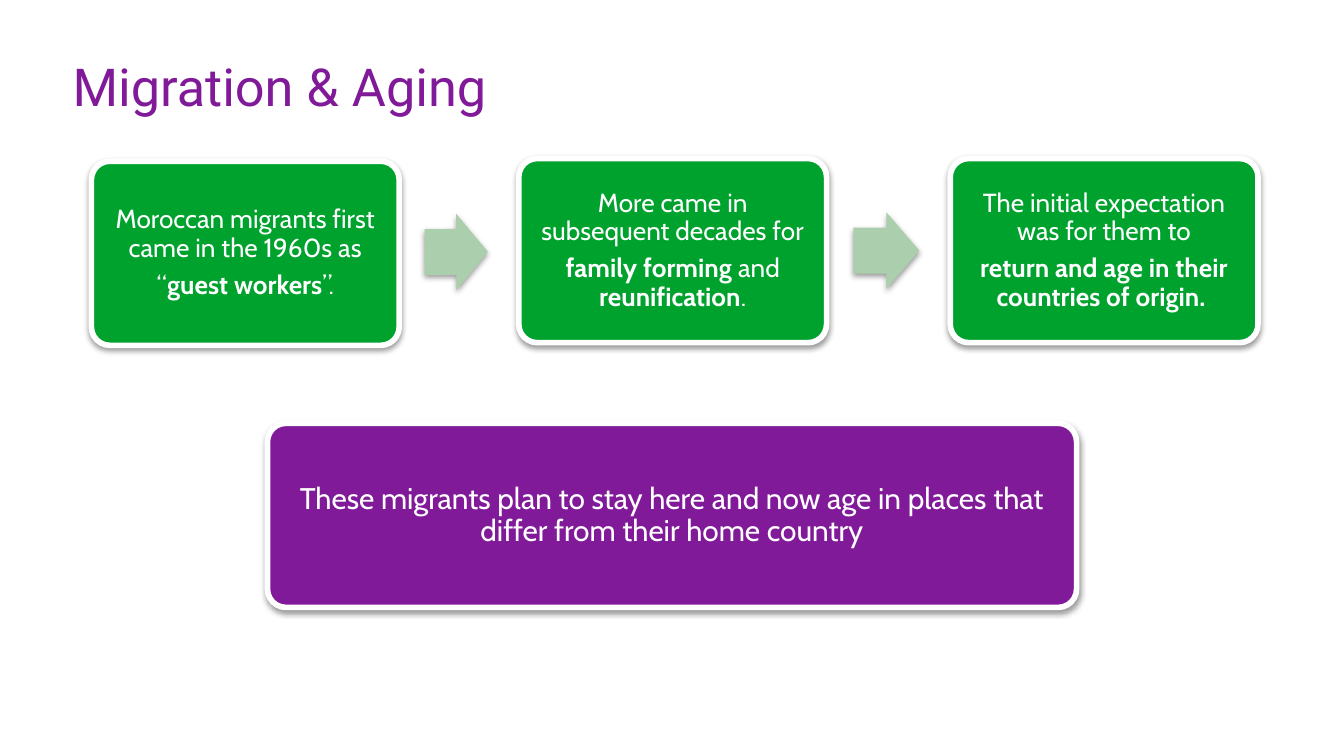
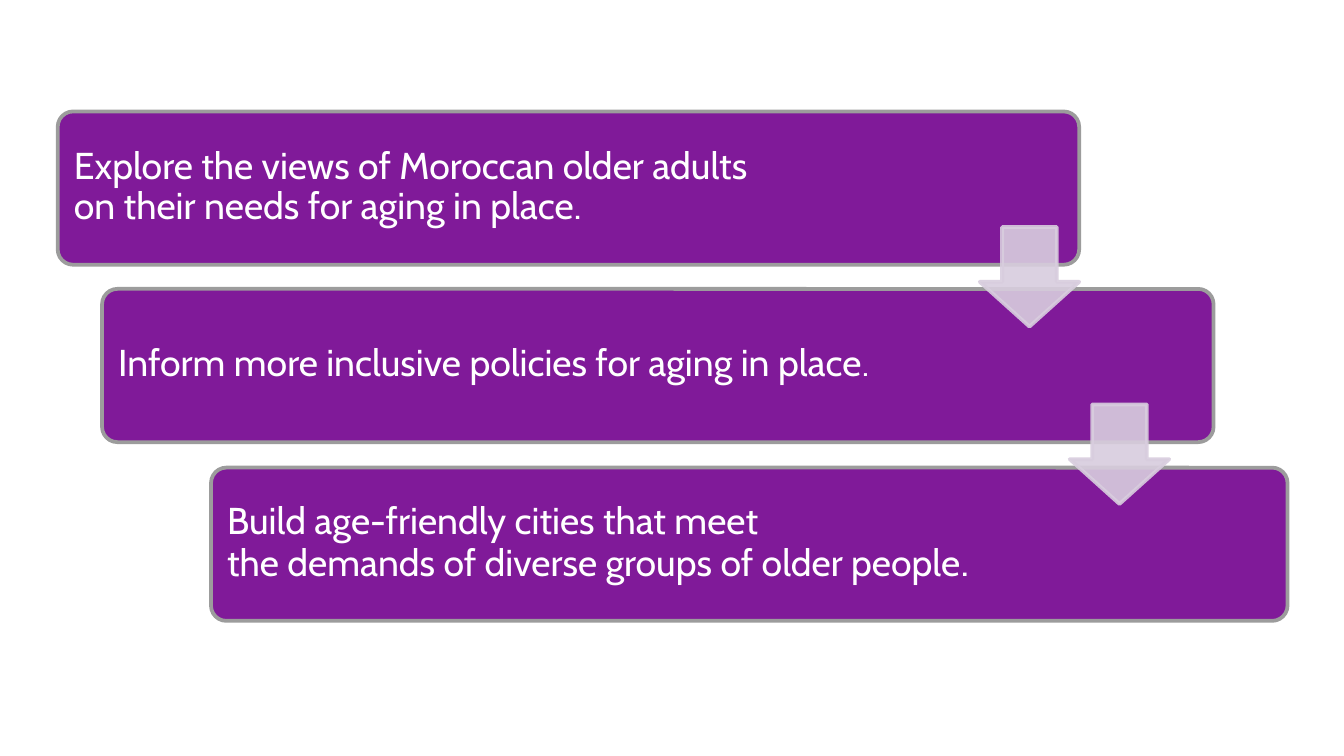
from lxml.etree import SubElement
from pptx import Presentation
from pptx.dml.color import RGBColor
from pptx.enum.shapes import MSO_SHAPE
from pptx.enum.text import MSO_ANCHOR, PP_ALIGN
from pptx.oxml.ns import qn
from pptx.util import Pt

SCALE = 9144
HUES = {"purple": "801A99", "green": "00A22E", "mint": "ABCEAD",
        "lilac": "D8CDDE", "gray": "9C9C9C", "white": "FFFFFF"}


class Deck:
    """Holds the shared style and the slide being filled."""

    def __init__(self):
        self.prs = Presentation()
        self.prs.slide_width, self.prs.slide_height = self.px(1000, 562.5)
        self.slide = None

    def px(self, *sizes):
        return [round(size * SCALE) for size in sizes]

    def hue(self, name):
        return RGBColor.from_string(HUES[name])

    def page(self):
        self.slide = self.prs.slides.add_slide(self.prs.slide_layouts[6])

    def fade(self, part, amount):
        for color in part.iter(qn("a:srgbClr")):
            SubElement(color, qn("a:alpha"), val=str(amount * 1000))

    def shade(self, shape):
        effects = shape.element.spPr.find(qn("a:effectLst"))
        outer = SubElement(effects, qn("a:outerShdw"), blurRad=str(Pt(3.1)),
                           dist=str(Pt(1.6)), dir="5400000", rotWithShape="0")
        SubElement(outer, qn("a:srgbClr"), val="000000")
        self.fade(outer, 38)

    def shape(self, kind, box, fill, line=None, width=0, adjs=()):
        shape = self.slide.shapes.add_shape(kind, *self.px(*box))
        shape.shadow.inherit = False
        for i, value in enumerate(adjs):
            shape.adjustments[i] = value
        shape.fill.solid()
        shape.fill.fore_color.rgb = self.hue(fill)
        if line:
            shape.line.color.rgb = self.hue(line)
            shape.line.width = Pt(width)
        else:
            shape.line.fill.background()
        return shape

    def text(self, box, paras, size, color="white", font="Cabin", align=PP_ALIGN.LEFT,
             inset=0, space=0.9, after=0, anchor=MSO_ANCHOR.MIDDLE):
        frame = self.slide.shapes.add_textbox(*self.px(*box)).text_frame
        frame.word_wrap = True
        frame.vertical_anchor = anchor
        edge, = self.px(inset)
        frame.margin_left = frame.margin_right = edge
        frame.margin_top = frame.margin_bottom = edge
        for i, runs in enumerate(paras):
            para = frame.add_paragraph() if i else frame.paragraphs[0]
            para.alignment = align
            para.line_spacing = space
            para.space_after = Pt(after)
            for words, bold, *own in runs:
                for j, part in enumerate(words.split("\n")):
                    if j:
                        para.add_line_break()
                    run = para.add_run()
                    run.text = part
                    run.font.name = font
                    run.font.size = Pt(own[0] if own else size)
                    run.font.bold = bold
                    run.font.color.rgb = self.hue(color)

    def title(self, words):
        self.text((54, 43, 894, 63), [[(words, False)]], 28, "purple", "Roboto",
                  space=Pt(32), anchor=MSO_ANCHOR.TOP)

    def card(self, box, fill, paras, size, inset):
        shape = self.shape(MSO_SHAPE.ROUNDED_RECTANGLE, box, fill, "white", 3, [0.1])
        self.shade(shape)
        left, top, wide, high = box
        self.text((left + 4, top + 4, wide - 8, high - 8), paras, size,
                  align=PP_ALIGN.CENTER, inset=inset, after=5)

    def step(self, box, room, runs):
        self.shape(MSO_SHAPE.ROUNDED_RECTANGLE, box, "purple", "gray", 2, [0.1])
        left, top, wide, high = box
        self.text((left + 4, top + 3, room, high - 7), [runs], 20, inset=8, after=7)

    def next(self, box, turn=0):
        shape = self.shape(MSO_SHAPE.RIGHT_ARROW, box, "mint", adjs=[0.6, 0.5])
        shape.rotation = turn
        self.shade(shape)

    def drop(self, left, top):
        shape = self.shape(MSO_SHAPE.DOWN_ARROW, (left, top, 74, 74), "lilac",
                           "lilac", 2, [0.55, 0.45])
        self.fade(shape.element.spPr, 90)


def history(deck):
    deck.page()
    deck.title("Migration & Aging")
    cards = [
        (68, 120, [[("Moroccan migrants first came in the 1960s as", False)],
                   [("“", False), ("guest workers", True), ("”.", False)]]),
        (386, 118, [[("More came in subsequent decades for", False)],
                    [("family forming ", True), ("and ", False),
                     ("reunification", True), (".", False)]]),
        (707, 118, [[("The initial expectation was for them to", False)],
                    [("return and age in their countries of origin. ", True)]]),
    ]
    for left, top, paras in cards:
        deck.card((left, top, 229, 137), "green", paras, 14, 6)
    deck.next((316, 159, 47, 57), 359.7)
    deck.next((635, 158, 49, 57))
    deck.card((199, 315, 602, 137), "purple",
              [[("These migrants plan to stay here and now age in places that "
                 "differ from their home country", False)]], 16, 7)


def goals(deck):
    deck.page()
    steps = [
        (43, 760, 637, [("Explore the views of Moroccan older adults\n"
                         "on their needs for aging in place.", False)]),
        (76, 827, 667, [("Inform more inclusive policies for aging in place", False),
                        (".", False, 18)]),
        (157, 801, 646, [("Build age-friendly cities that meet\n"
                          "the demands of diverse groups of older people", False),
                         (".", False, 21)]),
    ]
    for i, (left, wide, room, runs) in enumerate(steps):
        deck.step((left, 83 + round(132.5 * i), wide, 114), room, runs)
    for i in range(2):
        deck.drop(729 + 67 * i, 169 + 132 * i)


def main():
    deck = Deck()
    history(deck)
    goals(deck)
    deck.prs.save("out.pptx")


if __name__ == "__main__":
    main()
